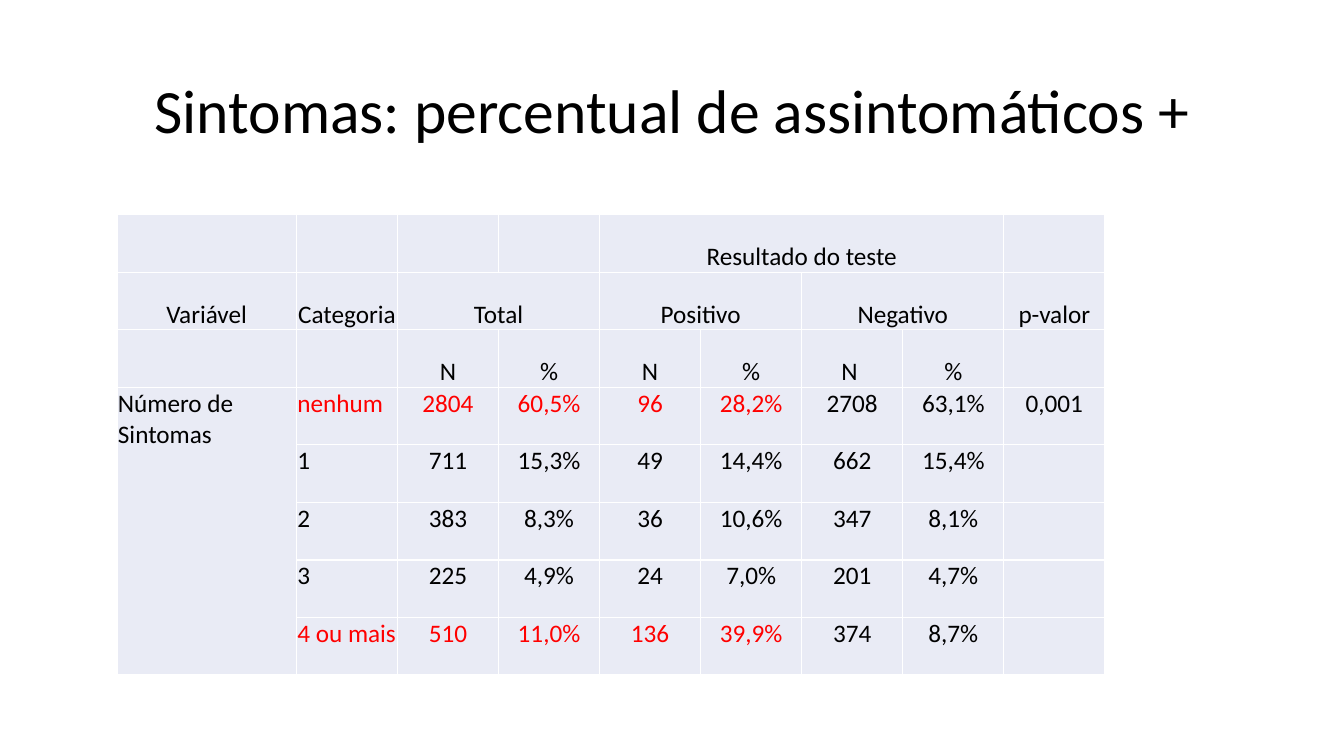
from dataclasses import dataclass

from lxml import etree
from pptx import Presentation
from pptx import util as u
from pptx.dml.color import RGBColor
from pptx.enum import text
from pptx.oxml import ns

BLACK = RGBColor(0x00, 0x00, 0x00)
RED = RGBColor(0xFF, 0x00, 0x00)
WHITE = RGBColor(0xFF, 0xFF, 0xFF)
PALE_BLUE = RGBColor(0xE9, 0xEB, 0xF5)

PAGE_WIDTH, PAGE_HEIGHT = u.Inches(13.33), u.Inches(7.5)
TABLE_LEFT, TABLE_TOP = u.Inches(1.16), u.Inches(2.13)
TABLE_WIDTH, TABLE_HEIGHT = u.Inches(9.8), u.Inches(4.57)
VARIABLE_WIDTH = u.Inches(1.78)
COLUMNS, ROWS = 9, 8
FIRST_SYMPTOM_ROW = 3
LAST_RED_COLUMN = 5

CENTER, LEFT = text.PP_ALIGN.CENTER, text.PP_ALIGN.LEFT
TOP, MIDDLE, BOTTOM = text.MSO_ANCHOR.TOP, text.MSO_ANCHOR.MIDDLE, text.MSO_ANCHOR.BOTTOM
CELL_MARGINS = {
    "margin_left": u.Inches(0.01),
    "margin_right": u.Inches(0.01),
    "margin_top": u.Inches(0.01),
    "margin_bottom": 0,
}


@dataclass
class Entry:
    row: int
    column: int
    wording: str
    rows: int = 1
    columns: int = 1
    align: text.PP_ALIGN = CENTER
    anchor: text.MSO_ANCHOR = BOTTOM
    color: RGBColor = BLACK


@dataclass
class SymptomCount:
    category: str
    values: tuple[str, ...]
    highlighted: bool = False


HEADINGS = [
    Entry(0, 4, "Resultado do teste", columns=4),
    Entry(1, 0, "Variável"),
    Entry(1, 1, "Categoria"),
    Entry(1, 2, "Total", columns=2),
    Entry(1, 4, "Positivo", columns=2),
    Entry(1, 6, "Negativo", columns=2),
    Entry(1, 8, "p-valor"),
    *(Entry(2, column, wording)
      for column, wording in enumerate(("N", "%", "N", "%", "N ", "%"), start=2)),
]
VARIABLE = Entry(FIRST_SYMPTOM_ROW, 0, "Número de Sintomas", rows=5, align=LEFT, anchor=TOP)
P_VALUE = Entry(FIRST_SYMPTOM_ROW, 8, "0,001", anchor=TOP)

SYMPTOM_COUNTS = [
    SymptomCount("nenhum", ("2804", "60,5%", "96", "28,2%", "2708", "63,1%"), True),
    SymptomCount("1", ("711", "15,3%", "49", "14,4%", "662", "15,4%")),
    SymptomCount("2", ("383", "8,3%", "36", "10,6%", "347", "8,1%")),
    SymptomCount("3", ("225", "4,9%", "24", "7,0%", "201", "4,7%")),
    SymptomCount("4 ou mais", ("510", "11,0%", "136", "39,9%", "374", "8,7%"), True),
]


def apply_format(target, values: dict) -> None:
    for name, value in values.items():
        setattr(target, name, value)


def write(frame, wording: str, size: int, align: text.PP_ALIGN, color: RGBColor) -> None:
    para = frame.paragraphs[0]
    para.alignment = align
    span = para.add_run()
    span.text = wording
    apply_format(span.font, {"name": "Calibri", "size": u.Pt(size)})
    span.font.color.rgb = color


def add_title(page, wording: str) -> None:
    box = page.shapes.add_textbox(
        u.Inches(0.92), u.Inches(0.4), u.Inches(11.5), u.Inches(1.45))
    apply_format(box.text_frame, {"word_wrap": True, "vertical_anchor": MIDDLE})
    write(box.text_frame, wording, 44, CENTER, BLACK)
    box.text_frame.paragraphs[0].line_spacing = 0.9


def add_borders(cell) -> None:
    """Draw a thin white line on all four sides of a cell."""
    properties = cell._tc.get_or_add_tcPr()
    for position, side in enumerate(("lnL", "lnR", "lnT", "lnB")):
        line = etree.Element(ns.qn(f"a:{side}"), w=str(u.Pt(1)))
        fill = etree.SubElement(line, ns.qn("a:solidFill"))
        etree.SubElement(fill, ns.qn("a:srgbClr"), val=str(WHITE))
        properties.insert(position, line)


def symptom_entries(row: int, count: SymptomCount) -> list[Entry]:
    """Lay one category and its values along a table row."""
    entries = []
    for column, wording in enumerate((count.category, *count.values), start=1):
        red = count.highlighted and column <= LAST_RED_COLUMN
        entries.append(Entry(row, column, wording, anchor=TOP,
                             align=LEFT if column == 1 else CENTER,
                             color=RED if red else BLACK))
    return entries


def add_entry(table, entry: Entry) -> None:
    cell = table.cell(entry.row, entry.column)
    if entry.rows * entry.columns > 1:
        cell.merge(table.cell(entry.row + entry.rows - 1,
                              entry.column + entry.columns - 1))
    cell.vertical_anchor = entry.anchor
    write(cell.text_frame, entry.wording, 18, entry.align, entry.color)


def add_symptom_table(page) -> None:
    table = page.shapes.add_table(
        ROWS, COLUMNS, TABLE_LEFT, TABLE_TOP, TABLE_WIDTH, TABLE_HEIGHT).table
    apply_format(table, {"first_row": False, "horz_banding": False})
    for column in table.columns:
        column.width = (TABLE_WIDTH - VARIABLE_WIDTH) // (COLUMNS - 1)
    table.columns[0].width = VARIABLE_WIDTH
    for cell in table.iter_cells():
        apply_format(cell, CELL_MARGINS)
        cell.fill.solid()
        cell.fill.fore_color.rgb = PALE_BLUE
        add_borders(cell)

    entries = [*HEADINGS, VARIABLE, P_VALUE]
    for row, count in enumerate(SYMPTOM_COUNTS, start=FIRST_SYMPTOM_ROW):
        entries += symptom_entries(row, count)
    for entry in entries:
        add_entry(table, entry)


def main() -> None:
    deck = Presentation()
    apply_format(deck, {"slide_width": PAGE_WIDTH, "slide_height": PAGE_HEIGHT})
    page = deck.slides.add_slide(deck.slide_layouts[6])
    add_title(page, "Sintomas: percentual de assintomáticos +")
    add_symptom_table(page)
    deck.save("out.pptx")


if __name__ == "__main__":
    main()
